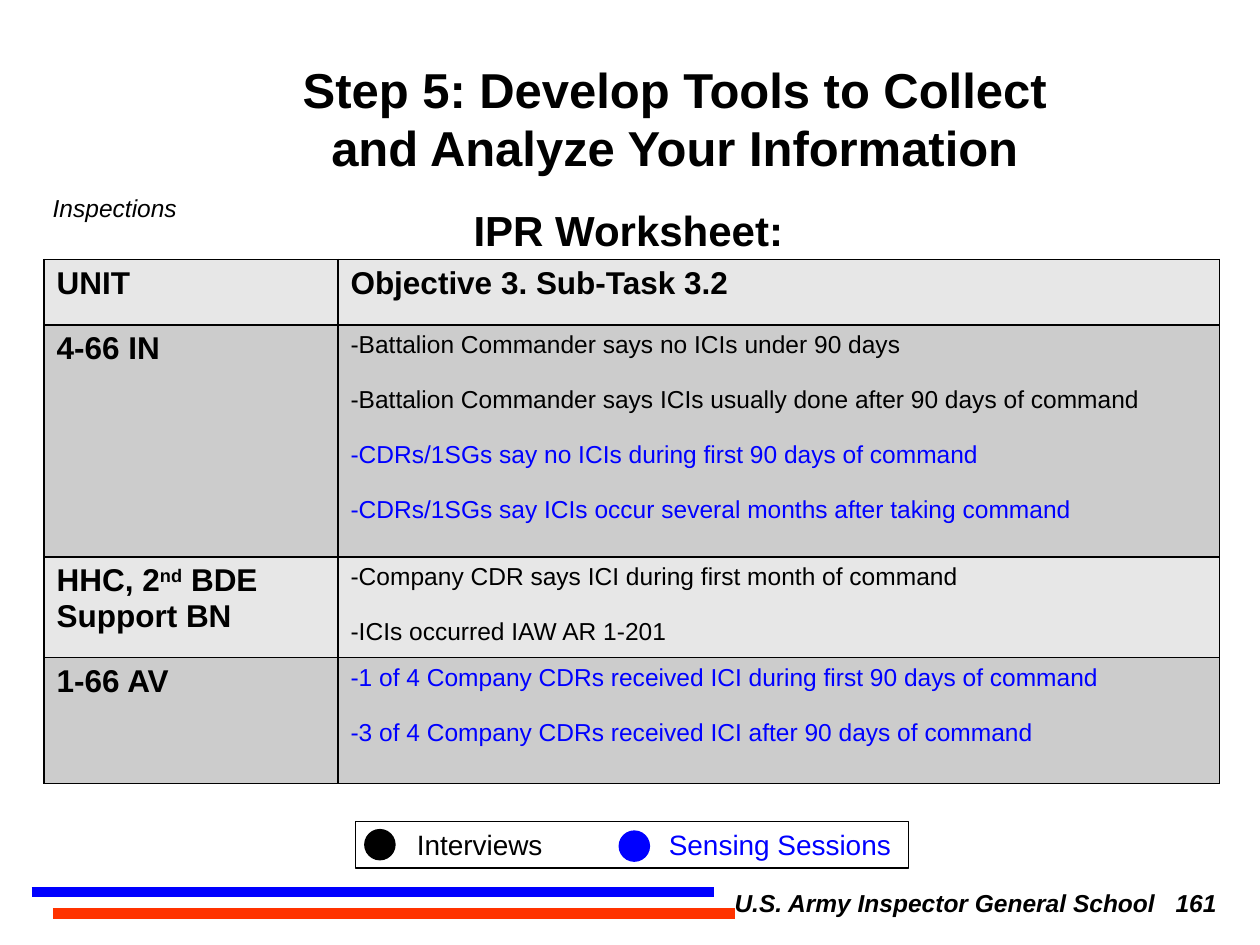
from collections import namedtuple
from pptx import Presentation
from pptx import util as u
from pptx.dml.color import RGBColor
from pptx.enum import shapes, text
from pptx.oxml import parse_xml
from pptx.oxml.ns import nsdecls

Box = namedtuple("Box", "x y w h")
PAGE = Box(0, 0, u.Inches(10), u.Inches(7.5))
BLACK, BLUE, RED = "000000", "0000FF", "FF3300"
BANDS = "E7E7E7", "CCCCCC"
COLS = 1, 3
ROWS = [  # height in grid rows, unit runs, colored findings
    (13, ["UNIT"], None),
    (46, ["4-66 IN"], [
        ("-Battalion Commander says no ICIs under 90 days", BLACK),
        ("-Battalion Commander says ICIs usually done after 90 days of command", BLACK),
        ("-CDRs/1SGs say no ICIs during first 90 days of command", BLUE),
        ("-CDRs/1SGs say ICIs occur several months after taking command", BLUE)]),
    (20, ["HHC, 2", "nd", " BDE Support BN"], [
        ("-Company CDR says ICI during first month of command", BLACK),
        ("-ICIs occurred IAW AR 1-201", BLACK)]),
    (25, ["1-66 AV"], [
        ("-1 of 4 Company CDRs received ICI during first 90 days of command", BLUE),
        ("-3 of 4 Company CDRs received ICI after 90 days of command", BLUE)]),
]


def rgb(code):
    return RGBColor.from_string(code)


def part(box, x, y, w, h):
    """Box given in percent of another box."""
    return Box(int(box.x + box.w * x / 100), int(box.y + box.h * y / 100),
               int(box.w * w / 100), int(box.h * h / 100))


def add_run(para, words, size, color=BLACK, bold=False, italic=False):
    run = para.add_run()
    run.text = words
    font = run.font
    font.name, font.size = "Arial", u.Pt(size)
    font.bold, font.italic = bold, italic
    font.color.rgb = rgb(color)
    return run


def add_text(group, box, wrap=True):
    frame = group.add_textbox(*box).text_frame
    frame.word_wrap = wrap
    return frame


def add_tab(para, inches):
    para._p.get_or_add_pPr().append(parse_xml(
        f'<a:tabLst {nsdecls("a")}><a:tab pos="{u.Inches(inches)}" algn="l"/></a:tabLst>'))


def add_shape(group, kind, box, fill=None, line=None):
    shape = group.add_shape(kind, *box)
    shape.shadow.inherit = False
    if fill:
        shape.fill.solid()
        shape.fill.fore_color.rgb = rgb(fill)
    else:
        shape.fill.background()
    if line:
        shape.line.color.rgb = rgb(line)
        shape.line.width = u.Pt(0.75)
    else:
        shape.line.fill.background()


def header(slide, box):
    title = add_text(slide.shapes, part(box, 21.7, 20, 63.7, 49)).paragraphs[0]
    title.alignment = text.PP_ALIGN.CENTER
    add_run(title, "Step 5: Develop Tools to Collect and Analyze Your Information", 28, bold=True)
    topic = add_text(slide.shapes, part(box, 3.2, 70.5, 12.6, 24))
    add_run(topic.paragraphs[0], "Inspections", 14, italic=True)
    name = add_text(slide.shapes, part(box, 36.6, 74.8, 27.8, 24), wrap=False)
    add_run(name.paragraphs[0], "IPR Worksheet:", 24, bold=True)


def style(cell, fill):
    cell.fill.solid()
    cell.fill.fore_color.rgb = rgb(fill)
    props = cell._tc.get_or_add_tcPr()
    for spot, side in enumerate("LRTB"):
        props.insert(spot, parse_xml(
            f'<a:ln{side} {nsdecls("a")} w="{u.Pt(1)}"><a:solidFill>'
            f'<a:srgbClr val="{BLACK}"/></a:solidFill></a:ln{side}>'))


def worksheet(slide, box):
    table = slide.shapes.add_table(len(ROWS), len(COLS), *box).table
    for col, share in zip(table.columns, COLS):
        col.width = box.w * share // sum(COLS)
    total = sum(row[0] for row in ROWS)
    for i, (share, unit, finds) in enumerate(ROWS):
        table.rows[i].height = box.h * share // total
        left, right = table.cell(i, 0), table.cell(i, 1)
        for cell in (left, right):
            style(cell, BANDS[i % 2])
        for words in unit:
            run = add_run(left.text_frame.paragraphs[0], words, 18, bold=True)
            if words == "nd":
                run.font._element.set("baseline", "30000")
        frame = right.text_frame
        if finds is None:
            add_run(frame.paragraphs[0], "Objective 3. Sub-Task 3.2", 18, bold=True)
            continue
        for j, (words, color) in enumerate(finds):
            para = frame.add_paragraph() if j else frame.paragraphs[0]
            if j:
                para.space_before = u.Pt(15.7)
            add_run(para, words, 14, color)


def legend(slide, box):
    group = slide.shapes.add_group_shape().shapes
    para = add_text(group, part(box, 8.9, 0, 91.1, 100), wrap=False).paragraphs[0]
    add_tab(para, 2)
    add_run(para, "Interviews\t", 16)
    add_run(para, "Sensing Sessions", 16, BLUE)
    for x, y, color in ((47.6, 19, BLUE), (1.6, 16, BLACK)):
        add_shape(group, shapes.MSO_SHAPE.OVAL, part(box, x, y, 5.7, 67.6), fill=color)
    add_shape(group, shapes.MSO_SHAPE.RECTANGLE, box, line=BLACK)


def footer(slide, box):
    for x, y, color in ((2.5, 16, BLUE), (4.2, 50, RED)):
        bar = part(box, x, y, 54.15, 0)
        line = slide.shapes.add_connector(
            shapes.MSO_CONNECTOR.STRAIGHT, bar.x, bar.y, bar.x + bar.w, bar.y)
        line.line.color.rgb = rgb(color)
        line.line.width = u.Pt(6)
        line._element.spPr.append(parse_xml(f'<a:effectLst {nsdecls("a")}/>'))
    frame = add_text(slide.shapes, part(box, 55, 0, 45, 100))
    frame.margin_left = u.Inches(0.33)
    para = frame.paragraphs[0]
    add_tab(para, 3.5)
    add_run(para, "U.S. Army Inspector General School\t161", 14, bold=True, italic=True)


def main():
    deck = Presentation()
    deck.slide_width, deck.slide_height = PAGE.w, PAGE.h
    slide = deck.slides.add_slide(deck.slide_layouts[6])
    footer(slide, part(PAGE, 0, 93.33, 100, 6.67))
    header(slide, part(PAGE, 0, 0, 100, 28))
    worksheet(slide, part(PAGE, 3.5, 27.47, 93.3, 55.47))
    legend(slide, part(PAGE, 28.2, 86.93, 43.9, 4.93))
    deck.save("out.pptx")


if __name__ == "__main__":
    main()
